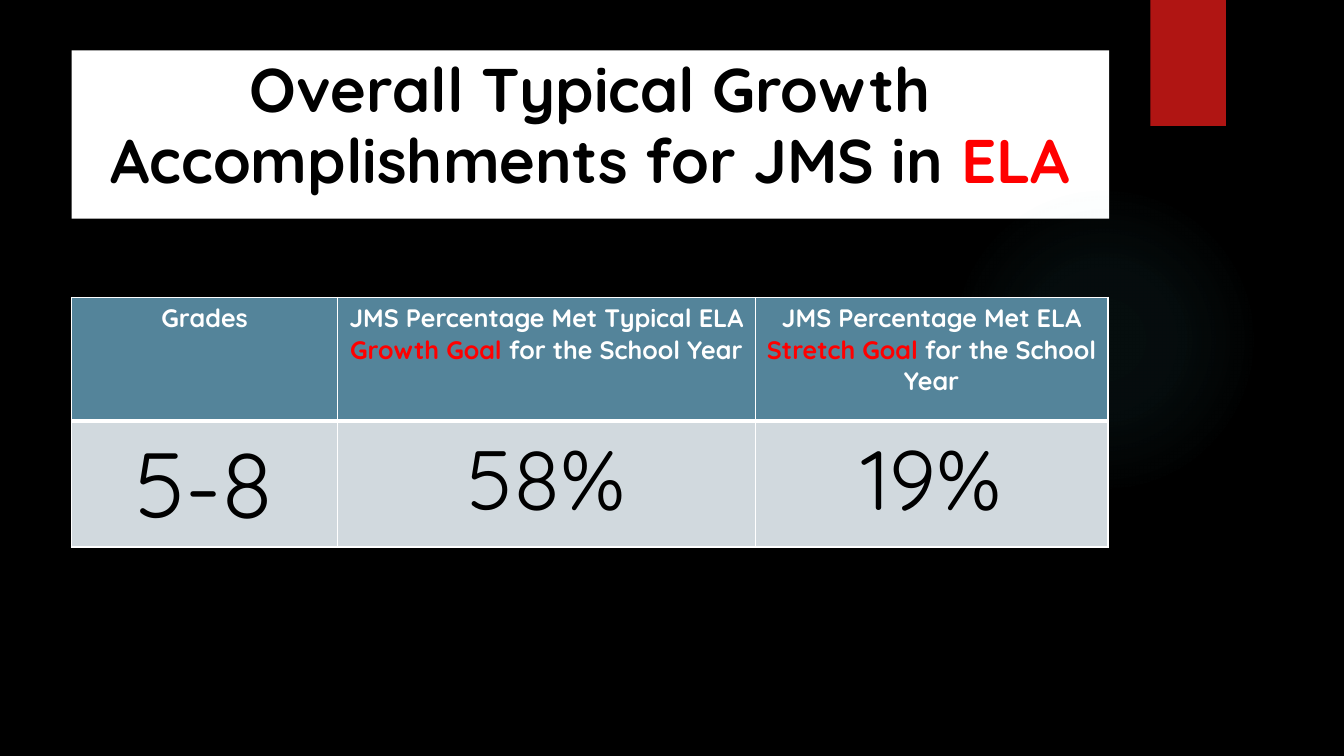
from dataclasses import dataclass

from lxml.etree import SubElement
from pptx import Presentation
from pptx.dml.color import RGBColor
from pptx.enum.shapes import MSO_SHAPE as Preset
from pptx.enum.text import MSO_ANCHOR as Anchor, MSO_AUTO_SIZE as AutoSize, PP_ALIGN as Align
from pptx.oxml.ns import qn
from pptx.shapes.autoshape import Shape
from pptx.slide import Slide
from pptx.table import _Cell as Cell
from pptx.text.text import TextFrame
from pptx.util import Inches, Pt


@dataclass(frozen=True)
class Theme:
    font: str = "Quicksand"
    background: str = "000000"
    dark: str = "000000"
    light: str = "FFFFFF"
    accent: str = "FF0000"
    ribbon: str = "B01513"
    glow: str = "50B9C1"
    header_fill: str = "54849A"
    body_fill: str = "D1D9DE"
    title_size: int = 44
    header_size: int = 18
    grade_size: int = 66
    percent_size: int = 60
    thin_border: int = 1
    thick_border: int = 3


@dataclass(frozen=True)
class Box:
    left: float
    top: float
    width: float
    height: float

    def lengths(self) -> tuple:
        return tuple(Inches(v) for v in (self.left, self.top, self.width, self.height))


@dataclass(frozen=True)
class Column:
    """Heading is a sequence of (text, is_accent) pieces."""
    width: float
    heading: tuple
    value: str
    value_size: int


THEME = Theme()
GLOW = Box(9.41, 1.83, 3.08, 3.08)
RIBBON = Box(11.41, 0, 0.75, 1.25)
TITLE = Box(0.71, 0.5, 10.29, 1.67)
TABLE = Box(0.71, 2.95, 10.29, 2.43)
HEADER_HEIGHT = 1.23
GLOW_STOPS = ((0, 7), (36, 6), (69, 0))  # position and opacity, percent

TITLE_PIECES = (("Overall Typical Growth Accomplishments for JMS in ", False), ("ELA", True))
COLUMNS = (
    Column(2.64, (("Grades", False),), "5-8", THEME.grade_size),
    Column(4.14, (("JMS Percentage Met Typical ELA ", False), ("Growth Goal", True),
                  (" for the School Year", False)), "58%", THEME.percent_size),
    Column(3.5, (("JMS Percentage Met ELA ", False), ("Stretch Goal ", True),
                 ("for the School Year", False)), "19%", THEME.percent_size),
)


def write_text(frame: TextFrame, pieces: tuple, *, size: int, color: str,
               bold: bool = False, line_spacing: float = 1.0) -> None:
    paragraph = frame.paragraphs[0]
    paragraph.alignment = Align.CENTER
    paragraph.line_spacing = line_spacing
    for text, is_accent in pieces:
        run = paragraph.add_run()
        run.text = text
        run.font.name = THEME.font
        run.font.size = Pt(size)
        run.font.bold = bold
        run.font.color.rgb = RGBColor.from_string(THEME.accent if is_accent else color)


def add_plain_shape(slide: Slide, preset: Preset, box: Box, color: str) -> Shape:
    shape = slide.shapes.add_shape(preset, *box.lengths())
    shape.shadow.inherit = False
    shape.fill.solid()
    shape.fill.fore_color.rgb = RGBColor.from_string(color)
    shape.line.fill.background()
    return shape


def apply_glow(shape: Shape) -> None:
    """Replace the solid fill by a radial gradient that fades out."""
    properties = shape.element.spPr
    solid = properties.find(qn("a:solidFill"))
    gradient = SubElement(properties, qn("a:gradFill"), rotWithShape="1")
    properties.replace(solid, gradient)
    stops = SubElement(gradient, qn("a:gsLst"))
    for position, opacity in GLOW_STOPS:
        stop = SubElement(stops, qn("a:gs"), pos=str(position * 1000))
        color = SubElement(stop, qn("a:srgbClr"), val=THEME.glow)
        SubElement(color, qn("a:alpha"), val=str(opacity * 1000))
    circle = SubElement(gradient, qn("a:path"), path="circle")
    SubElement(circle, qn("a:fillToRect"), l="50000", t="50000", r="50000", b="50000")


def format_cell(cell: Cell, fill: str, *, top: int, bottom: int) -> None:
    properties = cell._tc.get_or_add_tcPr()
    widths = {"L": THEME.thin_border, "R": THEME.thin_border, "T": top, "B": bottom}
    for side, width in widths.items():
        line = SubElement(properties, qn(f"a:ln{side}"), w=str(Pt(width)))
        SubElement(SubElement(line, qn("a:solidFill")), qn("a:srgbClr"), val=THEME.light)
    cell.fill.solid()
    cell.fill.fore_color.rgb = RGBColor.from_string(fill)


def add_title(slide: Slide) -> None:
    title = slide.shapes.title
    title.left, title.top, title.width, title.height = TITLE.lengths()
    title.fill.solid()
    title.fill.fore_color.rgb = RGBColor.from_string(THEME.light)
    frame = title.text_frame
    frame.word_wrap = True
    frame.auto_size = AutoSize.NONE
    frame.vertical_anchor = Anchor.TOP
    write_text(frame, TITLE_PIECES, size=THEME.title_size, color=THEME.dark,
               bold=True, line_spacing=0.96)


def add_growth_table(slide: Slide) -> None:
    table = slide.shapes.add_table(2, len(COLUMNS), *TABLE.lengths()).table
    table.horz_banding = False
    table.rows[0].height = Inches(HEADER_HEIGHT)
    table.rows[1].height = Inches(TABLE.height - HEADER_HEIGHT)
    for index, column in enumerate(COLUMNS):
        table.columns[index].width = Inches(column.width)
        header, body = table.cell(0, index), table.cell(1, index)
        format_cell(header, THEME.header_fill, top=THEME.thin_border, bottom=THEME.thick_border)
        format_cell(body, THEME.body_fill, top=THEME.thick_border, bottom=THEME.thin_border)
        write_text(header.text_frame, column.heading, size=THEME.header_size,
                   color=THEME.light, bold=True)
        write_text(body.text_frame, ((column.value, False),), size=column.value_size,
                   color=THEME.dark)


def main() -> None:
    presentation = Presentation()
    presentation.slide_width, presentation.slide_height = Inches(13.33), Inches(7.5)
    slide = presentation.slides.add_slide(presentation.slide_layouts[5])
    slide.background.fill.solid()
    slide.background.fill.fore_color.rgb = RGBColor.from_string(THEME.background)
    apply_glow(add_plain_shape(slide, Preset.OVAL, GLOW, THEME.glow))
    add_plain_shape(slide, Preset.RECTANGLE, RIBBON, THEME.ribbon)
    add_title(slide)
    add_growth_table(slide)
    presentation.save("out.pptx")


if __name__ == "__main__":
    main()
